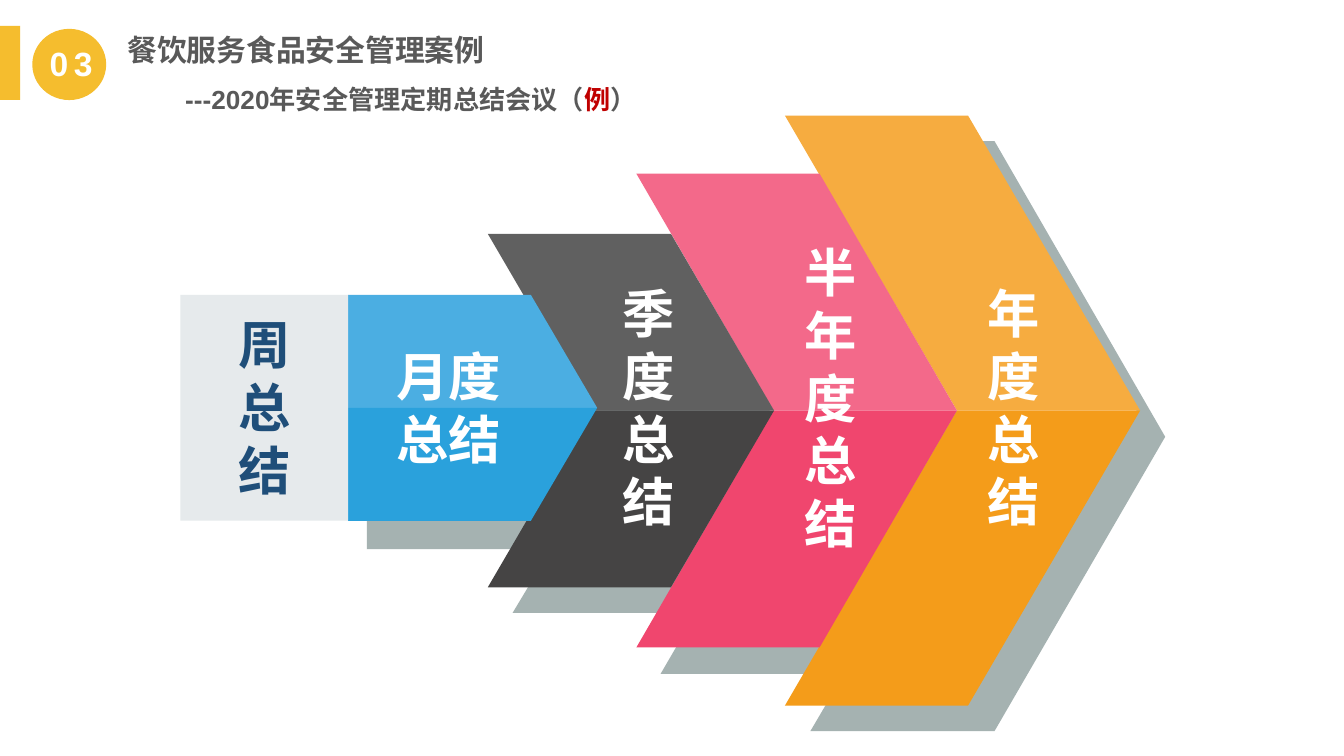
from dataclasses import dataclass

from lxml import etree
from pptx import Presentation
from pptx.dml.color import RGBColor
from pptx.enum.shapes import MSO_SHAPE
from pptx.enum.text import MSO_AUTO_SIZE, PP_ALIGN
from pptx.oxml.ns import qn
from pptx.util import Inches, Pt

OVAL, RECT = MSO_SHAPE.OVAL, MSO_SHAPE.RECTANGLE
CENTER, LEFT = PP_ALIGN.CENTER, PP_ALIGN.LEFT
GROW = MSO_AUTO_SIZE.SHAPE_TO_FIT_TEXT

# The grid has square cells: 100 columns by 56.25 rows, a 16:9 slide.
COLS, ROWS = 100, 56.25
CELL = Inches(10) / COLS

Point = tuple[float, float]
Box = tuple[float, float, float, float]


@dataclass(frozen=True)
class Theme:
    gold: str = "F5BD2E"
    white: str = "FFFFFF"
    gray: str = "595959"
    red: str = "C00000"
    navy: str = "1F4E79"
    pale: str = "E6EAEC"
    shade: str = "A5B2B1"
    latin: str = "Arial"
    asian: str = "Noto Sans CJK JP"
    label: int = 28
    badge: int = 18
    title: int = 16
    sub: int = 14


@dataclass(frozen=True)
class Band:
    """An arrow in two mirrored halves; notch is where its left edge meets mid."""
    left: float
    top: float
    edge: float
    tip: float
    notch: float
    mid: float
    light: str
    dark: str


@dataclass(frozen=True)
class Label:
    text: str
    box: Box
    color: str


T = Theme()
MID = 30.55
WIDE = 13.63

BANDS = [
    Band(left, top, left + WIDE, tip, tip - WIDE, MID, light, dark)
    for left, top, tip, light, dark in [
        (58.4, 8.6, 84.83, "F6AC40", "F49C1A"),
        (47.35, 12.92, 71.2, "F3698A", "F0466E"),
        (36.3, 17.4, 57.6, "606060", "454444"),
    ]
] + [Band(25.9, 21.95, 39.5, 44.43, 25.9, 30.35, "4BAEE2", "2AA1DC")]

LABELS = [
    Label("月度总结", (27.3, 25.15, 12.1, 10.4), T.white),
    Label("季度总结", (44.05, 20.45, 8.4, 19.8), T.white),
    Label("半年度总结", (57.6, 17.4, 8.4, 24.6), T.white),
    Label("年度总结", (71.2, 20.45, 8.4, 19.8), T.white),
    Label("周总结", (15.4, 22.75, 8.5, 15.1), T.navy),
]

SHADOW: list[Point] = [
    (74, 10.5), (72.9, 10.5), (84.6, 30.6), (57.3, 30.6), (50.8, 19.3),
    (38.15, 19.3), (41, 24.1), (39.9, 24.1), (43.7, 30.6), (27.3, 30.6),
    (27.3, 40.85), (41, 40.85), (38.15, 45.6), (51.8, 45.6), (49.15, 50.15),
    (62.8, 50.15), (60.3, 54.4), (74, 54.4), (86.7, 32.5),
]


def grid(n: float) -> int:
    return round(n * CELL)


def paint(shape, color: str) -> None:
    shape.shadow.inherit = False
    shape.fill.solid()
    shape.fill.fore_color.rgb = RGBColor.from_string(color)
    shape.line.fill.background()


def block(slide, kind, box: Box, color: str) -> None:
    paint(slide.shapes.add_shape(kind, *map(grid, box)), color)


def shape(slide, points: list[Point], color: str) -> None:
    dots = [(grid(x), grid(y)) for x, y in points]
    pen = slide.shapes.build_freeform(*dots[0])
    pen.add_line_segments(dots[1:], close=True)
    paint(pen.convert_to_shape(), color)


def band(slide, b: Band) -> None:
    for end, color in ((b.top, b.light), (2 * b.mid - b.top, b.dark)):
        shape(slide, [(b.left, end), (b.edge, end), (b.tip, b.mid),
                      (b.notch, b.mid)], color)


def frame(slide, box: Box):
    text = slide.shapes.add_textbox(*map(grid, box)).text_frame
    text.word_wrap = True
    text.auto_size = GROW
    return text


def style(run, size: int, color: str, face: str) -> None:
    run.font.size, run.font.bold, run.font.name = Pt(size), True, face
    run.font.color.rgb = RGBColor.from_string(color)
    asian = etree.SubElement(run.font._element, qn("a:ea"))
    asian.set("typeface", T.asian)


def write(para, parts: list[tuple[str, str]], size: int, face: str,
          align=LEFT) -> None:
    """Fill a paragraph with (text, color) runs."""
    para.alignment = align
    for text, color in parts:
        run = para.add_run()
        run.text = text
        style(run, size, color, face)


def header(slide) -> None:
    block(slide, OVAL, (2.4, 2.15, 5.5, 5.3), T.gold)
    block(slide, RECT, (-0.1, 1.93, 1.6, 5.5), T.gold)

    badge = frame(slide, (3, 2.8, 5.7, 3.7))
    badge.margin_left = badge.margin_right = grid(0.7)
    badge.margin_top = badge.margin_bottom = grid(0.4)
    write(badge.paragraphs[0], [("03", T.white)], T.badge, T.latin)
    badge.paragraphs[0].runs[0].font._element.set("spc", "300")

    title = frame(slide, (8.5, 0.53, 41.5, 8.6))
    head, sub = title.paragraphs[0], title.add_paragraph()
    write(head, [("餐饮服务食品安全管理案例", T.gray)], T.title, T.latin)
    write(sub, [("---2020年安全管理定期总结会议（", T.gray), ("例", T.red),
                ("）", T.gray)], T.sub, T.latin)
    head.line_spacing = sub.line_spacing = 1.5
    sub._p.get_or_add_pPr().set("marL", str(grid(4.3)))


def main() -> None:
    deck = Presentation()
    deck.slide_width, deck.slide_height = grid(COLS), grid(ROWS)
    slide = deck.slides.add_slide(deck.slide_layouts[6])
    header(slide)
    shape(slide, SHADOW, T.shade)
    for b in BANDS:
        band(slide, b)
    block(slide, RECT, (13.43, 21.95, 12.47, 16.8), T.pale)
    for l in LABELS:
        para = frame(slide, l.box).paragraphs[0]
        write(para, [(l.text, l.color)], T.label, T.asian, CENTER)
    deck.save("out.pptx")


if __name__ == "__main__":
    main()
